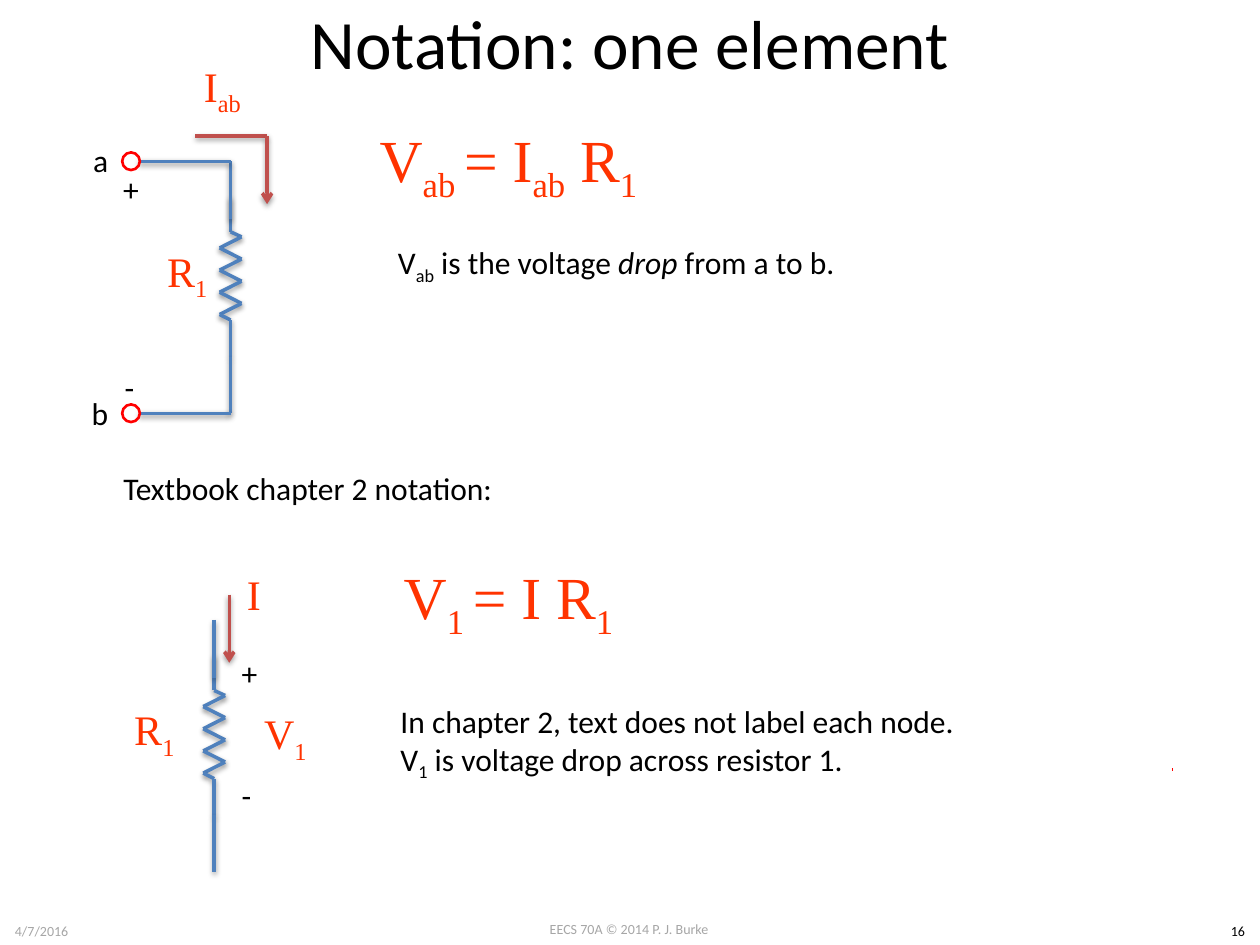
from itertools import pairwise

from lxml.etree import SubElement
from pptx import Presentation
from pptx.dml.color import RGBColor
from pptx.enum.shapes import MSO_CONNECTOR, MSO_SHAPE
from pptx.enum.text import MSO_ANCHOR, MSO_AUTO_SIZE, PP_ALIGN
from pptx.oxml.ns import qn
from pptx.util import Inches, Pt

COLUMNS, ROWS = 100, 75
CELL = Inches(10) / COLUMNS
BLACK, GRAY, BLUE = "000000", "A6A6A6", "4F81BD"
BRICK, RED, ORANGE = "C0504D", "FF0000", "FF3300"
SYMBOL = dict(size=24, font="Times New Roman", color=ORANGE, align=PP_ALIGN.CENTER,
              anchor=MSO_ANCHOR.MIDDLE, wrap=True)
EQUATION = SYMBOL | dict(size=34.1)


def grid(*lengths):
    return [round(length * CELL) for length in lengths]


def paint(target, color):
    target.rgb = RGBColor.from_string(color)


def add_text(page, box, text, size=18, font="Calibri", color=BLACK,
             align=PP_ALIGN.LEFT, anchor=MSO_ANCHOR.TOP, wrap=False):
    frame = page.shapes.add_textbox(*grid(*box)).text_frame
    frame.word_wrap = wrap
    frame.auto_size = MSO_AUTO_SIZE.NONE if wrap else MSO_AUTO_SIZE.SHAPE_TO_FIT_TEXT
    frame.vertical_anchor = anchor
    for number, line in enumerate(text.split("\n")):
        para = frame.add_paragraph() if number else frame.paragraphs[0]
        para.alignment = align
        for lowered, piece in enumerate(line.split("|")):
            for slanted, part in enumerate(piece.split("~")):
                if not part:
                    continue
                span = para.add_run()
                span.text = part
                span.font.name = font
                span.font.size = Pt(size)
                paint(span.font.color, color)
                if slanted % 2:
                    span.font.italic = True
                if lowered % 2:
                    span.font._element.set("baseline", "-25000")


def add_wire(page, points, color=BLUE, arrow=False):
    legs = list(pairwise(points))
    for number, (start, end) in enumerate(legs, 1):
        wire = page.shapes.add_connector(MSO_CONNECTOR.STRAIGHT, *grid(*start, *end))
        wire.line.width = Pt(2)
        paint(wire.line.color, color)
        if arrow and number == len(legs):
            SubElement(wire.line._get_or_add_ln(), qn("a:tailEnd"), type="arrow")
        effects = SubElement(wire._element.spPr, qn("a:effectLst"))
        shadow = SubElement(effects, qn("a:outerShdw"), blurRad=str(Pt(3.1)),
                            dist=str(Pt(1.6)), dir="5400000", rotWithShape="0")
        shade = SubElement(shadow, qn("a:srgbClr"), val=BLACK)
        SubElement(shade, qn("a:alpha"), val="38000")


def add_resistor(page, x, top):
    zigzag = [(x + (0.87 if turn % 2 == 0 else -0.87), top + 6 + 0.88 * turn)
              for turn in range(8)]
    add_wire(page, [(x, top + 2.8), (x, top + 5.6), *zigzag,
                    (x, top + 12.6), (x, top + 15.5)])
    add_wire(page, [(x, top), (x, top + 4.6)])
    add_wire(page, [(x, top + 15.5), (x, top + 20)])


def add_terminal(page, x, y):
    terminal = page.shapes.add_shape(MSO_SHAPE.OVAL, *grid(x - 0.7, y - 0.7, 1.4, 1.4))
    terminal.shadow.inherit = False
    terminal.fill.background()
    terminal.line.width = Pt(1.5)
    paint(terminal.line.color, RED)


def add_node_circuit(page, left, top):
    x = left + 11.9
    add_resistor(page, x, top + 9.4)
    for y in (top + 9.4, top + 29.4):
        add_wire(page, [(left + 4.6, y), (x, y)])
        add_terminal(page, left + 4, y)
    add_text(page, (left, top + 7.3, 3.2, 4), "a")
    add_text(page, (left - 0.1, top + 27.4, 3.4, 4), "b")
    add_text(page, (left + 2.4, top + 9.6, 3.3, 4), "+")
    add_text(page, (left + 2.5, top + 25.3, 2.8, 4), "-")
    add_wire(page, [(left + 9.1, top + 7.4), (left + 14.8, top + 7.4),
                    (left + 14.8, top + 12.8)], BRICK, arrow=True)
    add_text(page, (left + 5.3, top, 11.9, 7.3), "I|ab", **SYMBOL)
    add_text(page, (left + 2.5, top + 14.7, 11.9, 7.3), "R|1", **SYMBOL)


def add_textbook_circuit(page, left, top):
    x = left + 10.7
    add_resistor(page, x, top + 5.7)
    add_text(page, (left + 11.9, top + 7.9, 3.3, 4), "+")
    add_text(page, (left + 11.9, top + 17.6, 2.8, 4), "-")
    add_wire(page, [(x + 1.2, top + 3.7), (x + 1.2, top + 9.1)], BRICK, arrow=True)
    add_text(page, (left + 7.9, top, 11.9, 7.3), "I", **SYMBOL)
    add_text(page, (left, top + 11, 11.9, 7.3), "R|1", **SYMBOL)
    add_text(page, (left + 12.9, top + 12, 6.9, 5.9), "V|1", **SYMBOL)


def add_explanation(page, left, top, equation, note, note_box):
    add_text(page, (left, top, 26.4, 5.9), equation, **EQUATION)
    x, y, width, height = note_box
    add_text(page, (left + x, top + y, width, height), note)


def add_dot(page, x, y):
    builder = page.shapes.build_freeform(*grid(x, y))
    builder.add_line_segments([grid(x + 0.1, y)], close=False)
    dot = builder.convert_to_shape()
    dot.shadow.inherit = False
    dot.fill.background()
    dot.line.width = Pt(1.5)
    paint(dot.line.color, RED)


def add_footer(page, top):
    add_text(page, (0.2, top, 20.7, 2.3), "4/7/2016", size=8, color=GRAY,
             anchor=MSO_ANCHOR.MIDDLE, wrap=True)
    add_text(page, (38.3, top - 0.1, 23.3, 2.4), "EECS 70A © 2014 P. J. Burke",
             size=8, color=GRAY, align=PP_ALIGN.CENTER)
    add_text(page, (96.5, top, 3.5, 2.4), "16", size=8, align=PP_ALIGN.CENTER)


def main():
    deck = Presentation()
    deck.slide_width, deck.slide_height = grid(COLUMNS, ROWS)
    page = deck.slides.add_slide(deck.slide_layouts[6])
    add_text(page, (5, 0, 90, 6.7), "Notation: one element", size=39.6,
             align=PP_ALIGN.CENTER, anchor=MSO_ANCHOR.MIDDLE, wrap=True)
    add_node_circuit(page, 6.4, 3.4)
    add_explanation(page, 27.5, 10, "V|ab |= I|ab| R|1 ",
                    "V|ab| is the voltage ~drop~ from a to b.", (3.1, 8.8, 38.1, 4))
    add_text(page, (8.8, 36.7, 32.2, 4), "Textbook chapter 2 notation:")
    add_textbook_circuit(page, 6.3, 43.5)
    add_explanation(page, 27.5, 44.7, "V|1 |= I R|1 ",
                    "In chapter 2, text does not label each node.\n"
                    "V|1| is voltage drop across resistor 1.", (3.3, 10.5, 46.5, 7.1))
    add_dot(page, 93, 61.1)
    add_footer(page, 72.7)
    deck.save("out.pptx")


if __name__ == "__main__":
    main()
